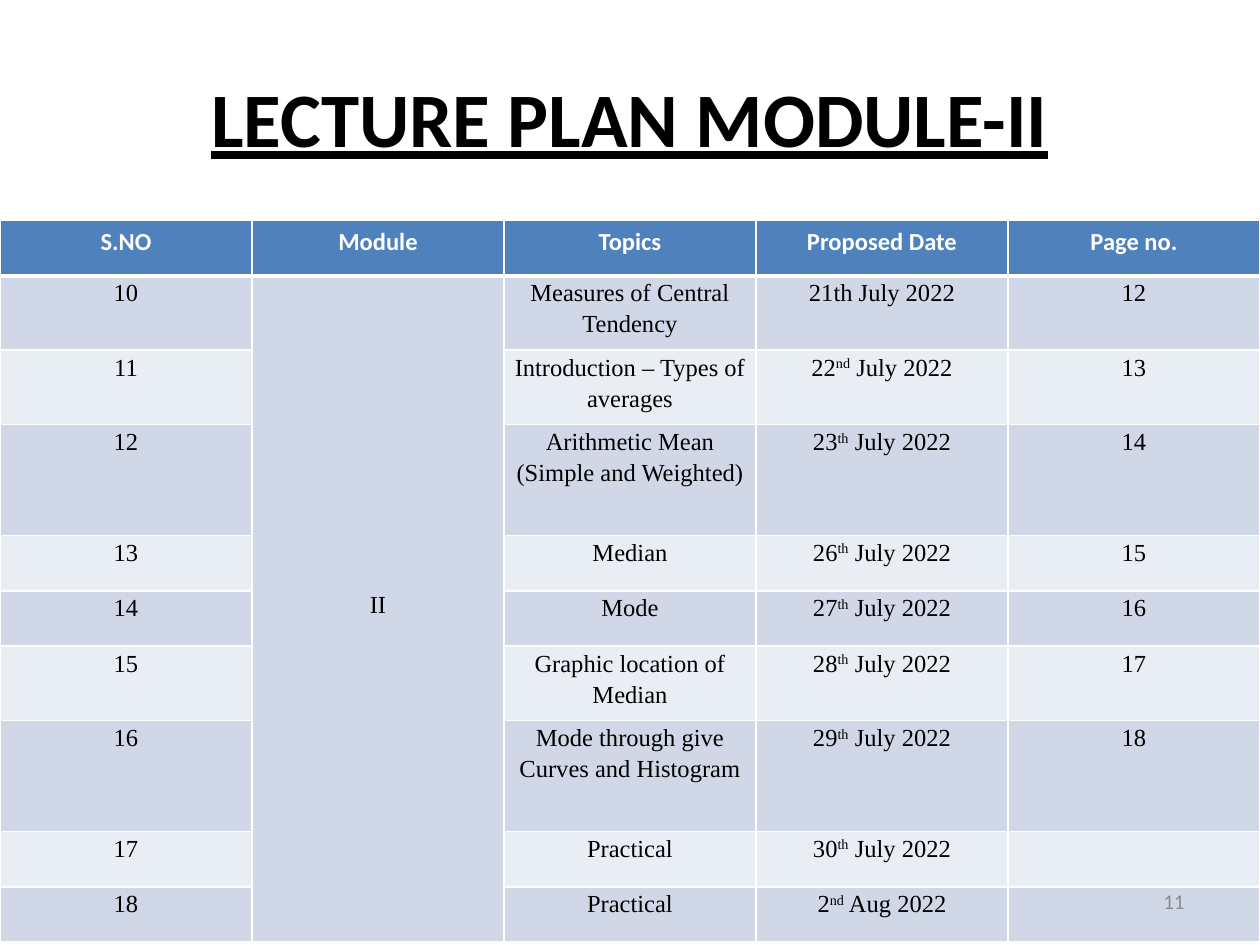
from dataclasses import dataclass

from lxml import etree
from pptx import Presentation
from pptx.dml.color import RGBColor
from pptx.enum import text
from pptx.oxml import ns
from pptx.util import Inches, Pt

COLORS = {
    "black": "000000",
    "white": "FFFFFF",
    "header": "4F81BD",
    "odd": "D0D8E8",
    "even": "E9EDF4",
    "number": "8C8C8C",
}
HEADERS = ["S.NO", "Module", "Topics", "Proposed Date", "Page no."]
SERIF = "Times New Roman"


@dataclass
class Run:
    text: str
    size: float = 14
    font: str = "Calibri"
    color: str = "black"
    bold: bool = False
    underline: bool = False
    superscript: bool = False


@dataclass
class Lecture:
    number: str
    topic: str
    day: str
    suffix: str
    month: str
    page: str
    height: float
    spacing: float = 0


LECTURES = [
    Lecture("10", "Measures of Central Tendency", "21th", "", "July", "12", 0.59, 2.4),
    Lecture("11", "Introduction – Types of averages", "22", "nd", "July", "13", 0.59, 2.4),
    Lecture("12", "Arithmetic Mean (Simple and Weighted)", "23", "th", "July", "14", 0.88, 2.4),
    Lecture("13", "Median", "26", "th", "July", "15", 0.44),
    Lecture("14", "Mode", "27", "th", "July", "16", 0.44),
    Lecture("15", "Graphic location of Median", "28", "th", "July", "17", 0.59),
    Lecture("16", "Mode through give Curves and Histogram", "29", "th", "July", "18", 0.88),
    Lecture("17", "Practical", "30", "th", "July", "", 0.44),
    Lecture("18", "Practical", "2", "nd", "Aug", "", 0.44),
]


def rgb(name: str) -> RGBColor:
    return RGBColor.from_string(COLORS[name])


def add_runs(p, runs: list[Run], align) -> None:
    p.alignment = align
    for run in runs:
        r = p.add_run()
        r.text = run.text
        r.font.size = Pt(run.size)
        r.font.name = run.font
        r.font.bold = run.bold
        r.font.underline = run.underline
        r.font.color.rgb = rgb(run.color)
        if run.superscript:
            r._r.get_or_add_rPr().set("baseline", "30000")


def add_text(s, box: tuple[float, float, float, float], run: Run, align) -> None:
    sp = s.shapes.add_textbox(*map(Inches, box))
    tf = sp.text_frame
    tf.word_wrap = True
    tf.vertical_anchor = text.MSO_ANCHOR.MIDDLE
    add_runs(tf.paragraphs[0], [run], align)


def style_cell(cell, fill: str, top: float = 1, bottom: float = 1) -> None:
    cell.fill.solid()
    cell.fill.fore_color.rgb = rgb(fill)
    tcPr = cell._tc.get_or_add_tcPr()
    widths = {"lnL": 1, "lnR": 1, "lnT": top, "lnB": bottom}
    for i, (tag, width) in enumerate(widths.items()):
        ln = etree.Element(ns.qn(f"a:{tag}"), w=str(Pt(width)))
        solid = etree.SubElement(ln, ns.qn("a:solidFill"))
        etree.SubElement(solid, ns.qn("a:srgbClr"), val=COLORS["white"])
        tcPr.insert(i, ln)


def fill_body_cell(cell, runs: list[Run], spacing: float = 0) -> None:
    cell.margin_left = cell.margin_right = Inches(0.07)
    cell.margin_top = cell.margin_bottom = 0
    p = cell.text_frame.paragraphs[0]
    p.line_spacing = 1.15
    p.space_before = p.space_after = Pt(spacing)
    add_runs(p, runs, text.PP_ALIGN.CENTER)


def date_runs(lecture: Lecture) -> list[Run]:
    rest = f" {lecture.month} 2022"
    if not lecture.suffix:
        return [Run(lecture.day + rest, font=SERIF)]
    return [
        Run(lecture.day, font=SERIF),
        Run(lecture.suffix, font=SERIF, superscript=True),
        Run(rest, font=SERIF),
    ]


def add_plan(s) -> None:
    heights = [0.44] + [lecture.height for lecture in LECTURES]
    frame = s.shapes.add_table(
        len(heights), len(HEADERS), 0, Inches(1.75), Inches(10), Inches(sum(heights))
    )
    table = frame.table
    for row, height in zip(table.rows, heights):
        row.height = Inches(height)
    for col, label in enumerate(HEADERS):
        table.columns[col].width = Inches(2)
        cell = table.cell(0, col)
        style_cell(cell, "header", bottom=3)
        run = Run(label, color="white", bold=True)
        add_runs(cell.text_frame.paragraphs[0], [run], text.PP_ALIGN.CENTER)

    for row, lecture in enumerate(LECTURES, start=1):
        for col in range(len(HEADERS)):
            fill = "odd" if row % 2 or col == 1 else "even"
            style_cell(table.cell(row, col), fill, top=3 if row == 1 else 1)
        fill_body_cell(table.cell(row, 0), [Run(lecture.number, font=SERIF)])
        fill_body_cell(table.cell(row, 2), [Run(lecture.topic, font=SERIF)], lecture.spacing)
        fill_body_cell(table.cell(row, 3), date_runs(lecture))
        if lecture.page:
            fill_body_cell(table.cell(row, 4), [Run(lecture.page, font=SERIF)])

    module = table.cell(1, 1)
    module.merge(table.cell(len(LECTURES), 1))
    fill_body_cell(module, [Run("II", font=SERIF)])
    module.vertical_anchor = text.MSO_ANCHOR.MIDDLE
    module.margin_bottom = Inches(0.1)


def main() -> None:
    prs = Presentation()
    prs.slide_width, prs.slide_height = Inches(10), Inches(7.5)
    s = prs.slides.add_slide(prs.slide_layouts[6])
    title = Run("LECTURE PLAN MODULE-II", size=44, bold=True, underline=True)
    add_text(s, (0.5, 0.3, 9, 1.25), title, text.PP_ALIGN.CENTER)
    add_plan(s)
    number = Run("11", size=12, color="number")
    add_text(s, (7.17, 6.95, 2.33, 0.4), number, text.PP_ALIGN.RIGHT)
    prs.save("out.pptx")


if __name__ == "__main__":
    main()
